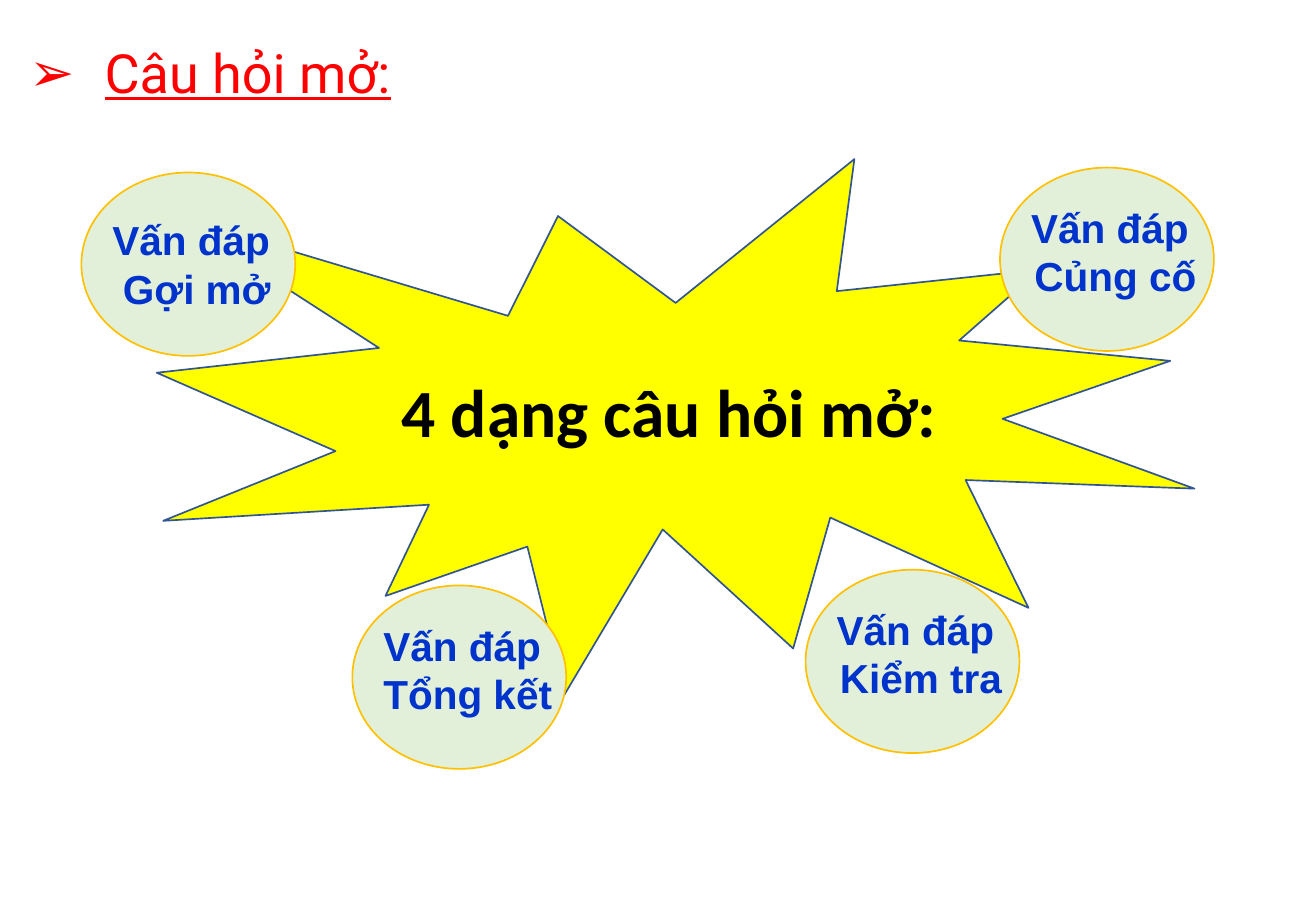
from lxml import etree
from pptx import Presentation
from pptx.dml.color import RGBColor
from pptx.enum.shapes import MSO_SHAPE
from pptx.enum.text import MSO_ANCHOR, MSO_AUTO_SIZE, PP_ALIGN
from pptx.oxml.ns import qn
from pptx.util import Inches, Pt

# Content
TITLE = "Câu hỏi mở:"
CENTRE = "4 dạng câu hỏi mở:"
# Left and top of each ellipse, drop of its label, lines of the label
KINDS = [
    (0.67, 1.42, 0.30, ("Vấn đáp ", "Gợi mở")),
    (8.23, 1.38, 0.24, ("Vấn đáp ", "Củng cố")),
    (2.90, 4.82, 0.24, ("Vấn đáp ", "Tổng kết")),
    (6.63, 4.69, 0.24, ("Vấn đáp ", "Kiểm tra")),
]
COLORS = {
    "title": "FF0000", "star": "FFFF00", "star line": "325491", "centre": "000000",
    "ellipse": "E2F0D9", "ellipse line": "FFC000", "label": "0033CC",
}
ELLIPSE_SIZE = (1.76, 1.51)
LABEL_SIZE = (1.6, 0.91)
LABEL_INDENT = 0.15
HANGING = Inches(0.62)


def color(name):
    return RGBColor.from_string(COLORS[name])


def style(paragraph, align, font_name, size, color_name, bold=False):
    paragraph.alignment = align
    font = paragraph.font
    font.name, font.size, font.bold = font_name, Pt(size), bold
    font.color.rgb = color(color_name)


def add_figure(kind, left, top, width, height, name):
    figure = slide.shapes.add_shape(
        kind, Inches(left), Inches(top), Inches(width), Inches(height))
    figure.shadow.inherit = False
    figure.fill.solid()
    figure.fill.fore_color.rgb = color(name)
    figure.line.color.rgb = color(name + " line")
    figure.line.width = Pt(1)
    return figure


deck = Presentation()
deck.slide_width, deck.slide_height = Inches(10.83), Inches(7.5)
slide = deck.slides.add_slide(deck.slide_layouts[5])

# Title with an arrow bullet
title = slide.shapes.title
title.left, title.top = Inches(0.14), Inches(0.13)
title.width, title.height = Inches(5.25), Inches(0.99)
frame = title.text_frame
frame.text = TITLE
frame.auto_size = MSO_AUTO_SIZE.NONE
frame.vertical_anchor = MSO_ANCHOR.MIDDLE
para = frame.paragraphs[0]
para.line_spacing = 0.9
properties = para._p.get_or_add_pPr()
properties.set("marL", str(HANGING))
properties.set("indent", str(-HANGING))
etree.SubElement(properties, qn("a:buFont")).set("typeface", "Arial")
etree.SubElement(properties, qn("a:buChar")).set("char", "➢")
style(para, PP_ALIGN.JUSTIFY, "Roboto", 32, "title")
para.font.underline = True

# Star in the middle
star = add_figure(MSO_SHAPE.EXPLOSION1, 1.29, 1.31, 8.54, 4.41, "star")
star.text_frame.text = CENTRE
star.text_frame.vertical_anchor = MSO_ANCHOR.MIDDLE
style(star.text_frame.paragraphs[0], PP_ALIGN.CENTER, "Calibri", 40, "centre", True)

# Ellipses with their labels
for left, top, drop, lines in KINDS:
    add_figure(MSO_SHAPE.OVAL, left, top, *ELLIPSE_SIZE, "ellipse")
    label = slide.shapes.add_textbox(
        Inches(left + LABEL_INDENT), Inches(top + drop), *map(Inches, LABEL_SIZE))
    label.text_frame.text = "\n".join(lines)
    label.text_frame.word_wrap = False
    label.text_frame.auto_size = MSO_AUTO_SIZE.SHAPE_TO_FIT_TEXT
    for para in label.text_frame.paragraphs:
        style(para, PP_ALIGN.CENTER, "Arial", 24, "label", True)

deck.save("out.pptx")
